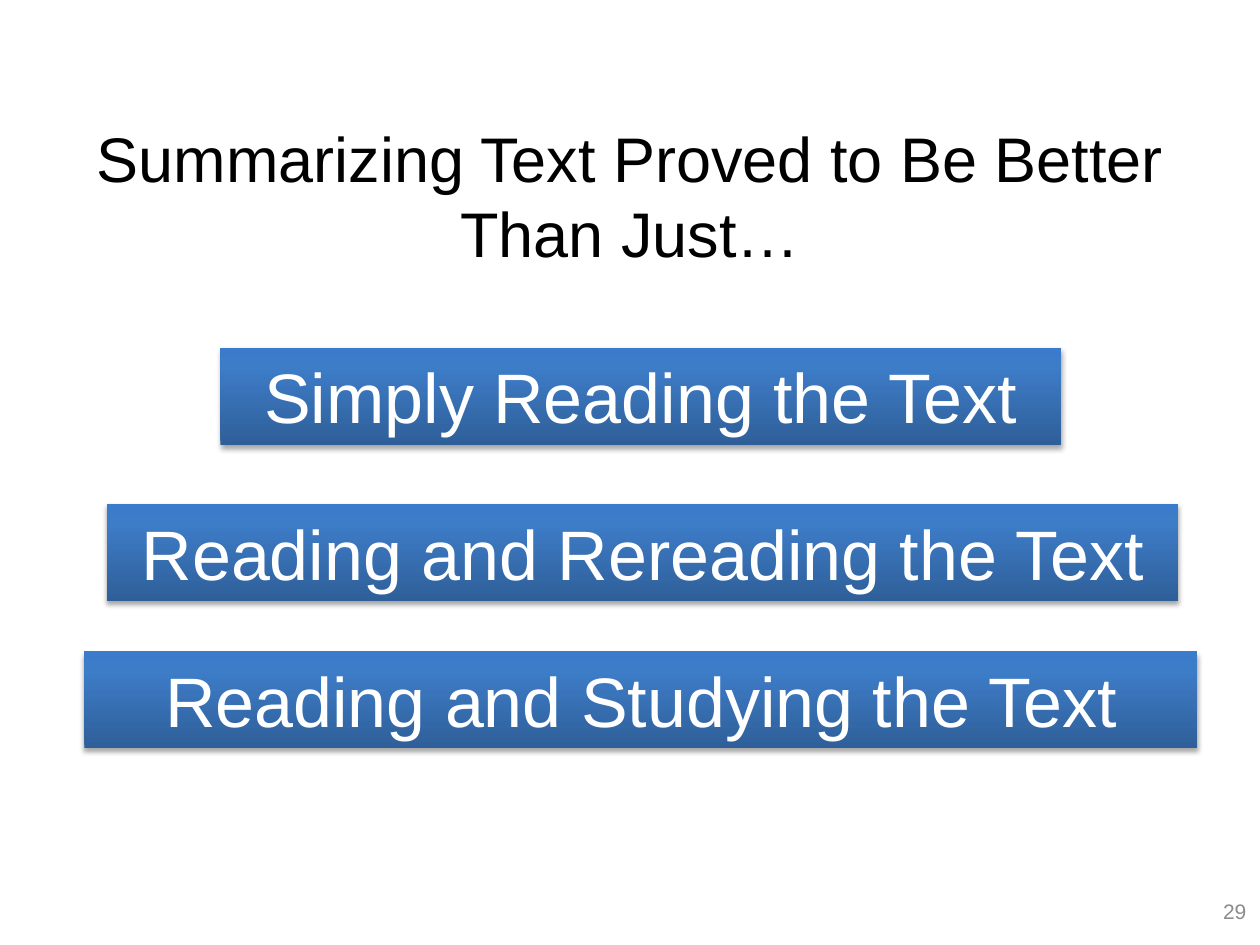
from dataclasses import dataclass

from lxml.etree import SubElement
from pptx import Presentation
from pptx.dml.color import RGBColor
from pptx.enum.shapes import MSO_SHAPE as Preset
from pptx.enum.text import MSO_ANCHOR as Anchor, MSO_AUTO_SIZE as AutoSize, PP_ALIGN as Align
from pptx.oxml.ns import qn
from pptx.util import Inches, Pt

FONT = "Arial"
BAR_HEIGHT = 0.77
BAR_GRADIENT = ((0, "2F5F99"), (80, "3D7CC7"), (100, "3A7CCB"))


@dataclass
class Bar:
    text: str
    left: float
    top: float
    width: float


BARS = (
    Bar("Simply Reading the Text", 1.75, 2.76, 6.67),
    Bar("Reading and Rereading the Text", 0.85, 4, 8.5),
    Bar("Reading and Studying the Text", 0.67, 5.17, 8.83),
)


def rgb(color: str) -> RGBColor:
    return RGBColor.from_string(color)


def write_text(shape, text: str, *, size: float, color: str,
               align=Align.CENTER, anchor=Anchor.MIDDLE) -> None:
    frame = shape.text_frame
    frame.word_wrap = True
    frame.vertical_anchor = anchor
    paragraph = frame.paragraphs[0]
    paragraph.alignment = align
    run = paragraph.add_run()
    run.text = text
    run.font.name = FONT
    run.font.size = Pt(size)
    run.font.color.rgb = rgb(color)


def add_text_box(slide, text: str, left: float, top: float,
                 width: float, height: float, **text_format) -> None:
    box = slide.shapes.add_textbox(Inches(left), Inches(top), Inches(width), Inches(height))
    write_text(box, text, **text_format)


def set_gradient(shape, stops) -> None:
    """Fill the shape from bottom to top with (percent, color) stops."""
    shape.fill.gradient()
    shape.fill.gradient_angle = 90
    stop_list = shape._element.spPr.find(f".//{qn('a:gsLst')}")
    for old_stop in list(stop_list):
        stop_list.remove(old_stop)
    for percent, color in stops:
        stop = SubElement(stop_list, qn("a:gs"), pos=str(percent * 1000))
        SubElement(stop, qn("a:srgbClr"), val=color)


def set_shadow(shape, color: str, opacity: int, blur: float, distance: float) -> None:
    """Cast a soft shadow straight down."""
    shape.shadow.inherit = False
    effects = shape._element.spPr.find(qn("a:effectLst"))
    shadow = SubElement(effects, qn("a:outerShdw"), blurRad=str(Pt(blur)),
                        dist=str(Pt(distance)), dir="5400000", rotWithShape="0")
    shadow_color = SubElement(shadow, qn("a:srgbClr"), val=color)
    SubElement(shadow_color, qn("a:alpha"), val=str(opacity * 1000))


def add_bar(slide, bar: Bar) -> None:
    shape = slide.shapes.add_shape(Preset.RECTANGLE, Inches(bar.left), Inches(bar.top),
                                   Inches(bar.width), Inches(BAR_HEIGHT))
    set_gradient(shape, BAR_GRADIENT)
    shape.line.fill.background()
    set_shadow(shape, "000000", opacity=35, blur=3.1, distance=1.8)
    write_text(shape, bar.text, size=40, color="FFFFFF", anchor=Anchor.TOP)
    shape.text_frame.auto_size = AutoSize.SHAPE_TO_FIT_TEXT


def main() -> None:
    presentation = Presentation()
    presentation.slide_width = Inches(10)
    presentation.slide_height = Inches(7.5)
    slide = presentation.slides.add_slide(presentation.slide_layouts[6])

    # Title
    add_text_box(slide, "Summarizing Text Proved to Be Better Than Just…",
                 0.5, 0.92, 9, 1.25, size=36, color="000000")

    # Weaker study methods
    for bar in BARS:
        add_bar(slide, bar)

    # Slide number
    add_text_box(slide, "29", 9, 7, 0.99, 0.47, size=12, color="8C8C8C", align=Align.RIGHT)

    presentation.save("out.pptx")


if __name__ == "__main__":
    main()
